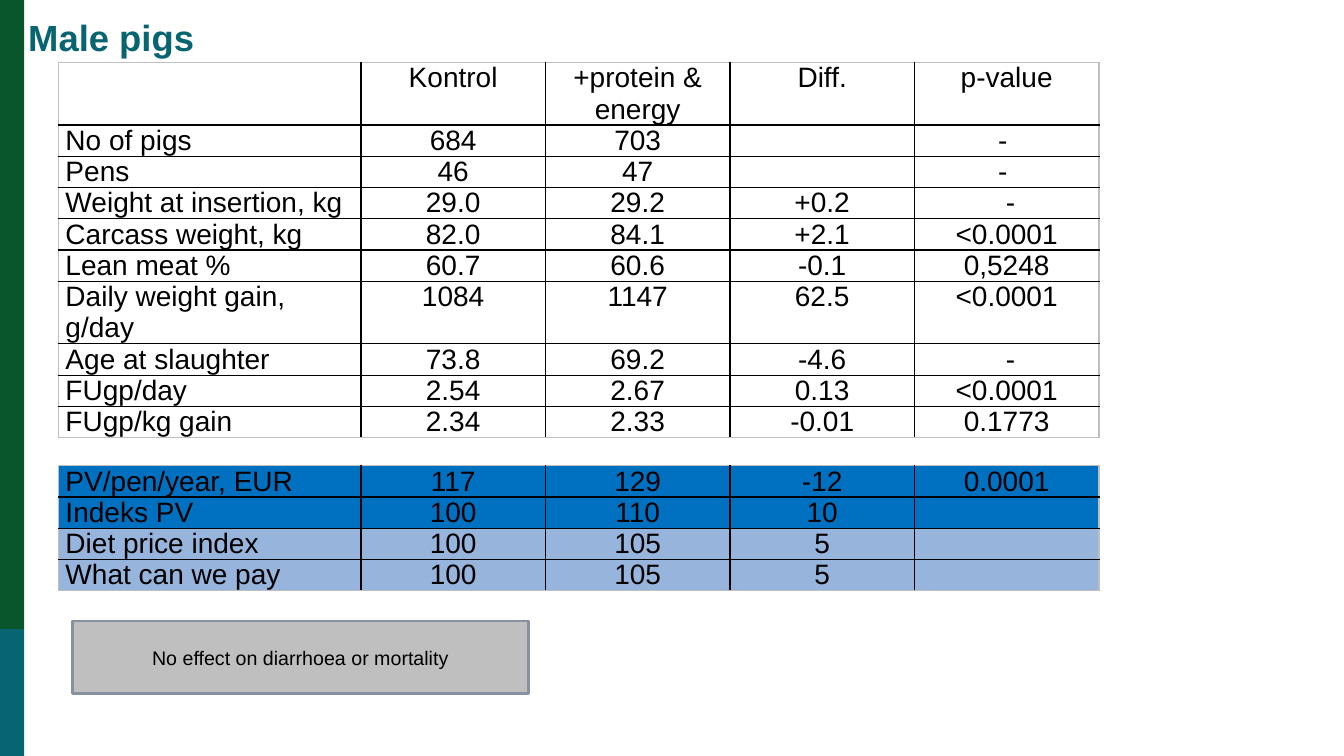
from lxml import etree
from pptx import Presentation
from pptx import util as u
from pptx.dml.color import RGBColor
from pptx.enum import shapes, text
from pptx.oxml import ns

FONT = "Arial"
COLORS = {
    "teal": "076471", "green": "09562C", "black": "000000",
    "outer": "BFBFBF", "blue": "0070C0", "light_blue": "96B4DC",
    "note": "BFBFBF", "note_line": "88919F",
}
ROW_HEIGHT = 0.31
COLUMNS = [3, 1.83, 1.83, 1.83, 1.83]
RESULTS = [
    ["", "Kontrol", "+protein & energy", "Diff.", "p-value"],
    ["No of pigs", "684", "703", "", "- "],
    ["Pens", "46", "47", "", "- "],
    ["Weight at insertion, kg", "29.0", "29.2", "+0.2", " -"],
    ["Carcass weight, kg", "82.0", "84.1", "+2.1", "<0.0001"],
    ["Lean meat %", "60.7", "60.6", "-0.1", "0,5248"],
    ["Daily weight gain, g/day", "1084", "1147", "62.5", "<0.0001"],
    ["Age at slaughter", "73.8", "69.2", "-4.6", " -"],
    ["FUgp/day", "2.54", "2.67", "0.13", "<0.0001"],
    ["FUgp/kg gain", "2.34", "2.33", "-0.01", "0.1773"],
]
ECONOMY = [
    ["PV/pen/year, EUR", "117", "129", "-12", "0.0001"],
    ["Indeks PV", "100", "110", "10", ""],
    ["Diet price index", "100", "105", "5", ""],
    ["What can we pay", "100", "105", "5", ""],
]


def rgb(name):
    return RGBColor.from_string(COLORS[name])


def style_paragraph(p, size, color, align, bold=False):
    p.alignment = align
    p.font.name, p.font.size, p.font.bold = FONT, u.Pt(size), bold
    p.font.color.rgb = rgb(color)


def add_box(s, left, top, width, height, fill, line=None):
    sp = s.shapes.add_shape(shapes.MSO_SHAPE.RECTANGLE, u.Inches(left), u.Inches(top),
                            u.Inches(width), u.Inches(height))
    sp.shadow.inherit = False
    sp.fill.solid()
    sp.fill.fore_color.rgb = rgb(fill)
    if line:
        sp.line.color.rgb = rgb(line)
        sp.line.width = u.Pt(2)
    else:
        sp.line.fill.background()
    return sp


def add_title(s, title):
    sp = s.shapes.title
    sp.left, sp.top = u.Inches(0.28), u.Inches(0)
    sp.width, sp.height = u.Inches(10.26), u.Inches(0.78)
    tf = sp.text_frame
    tf.margin_left = tf.margin_right = tf.margin_top = tf.margin_bottom = 0
    tf.vertical_anchor = text.MSO_ANCHOR.MIDDLE
    tf.text = title
    p = tf.paragraphs[0]
    p.line_spacing = 0.9
    style_paragraph(p, 26, "teal", text.PP_ALIGN.LEFT, bold=True)


def set_borders(cell, outer_sides):
    tcPr = cell._tc.get_or_add_tcPr()
    for i, side in enumerate(("lnL", "lnR", "lnT", "lnB")):
        ln = etree.Element(ns.qn(f"a:{side}"), w=str(u.Pt(1)))
        fill = etree.SubElement(ln, ns.qn("a:solidFill"))
        color = COLORS["outer" if side in outer_sides else "black"]
        etree.SubElement(fill, ns.qn("a:srgbClr"), val=color)
        tcPr.insert(i, ln)


def add_data_table(s, top, rows, fills, tall_rows=()):
    heights = [ROW_HEIGHT * (2 if i in tall_rows else 1) for i in range(len(rows))]
    frame = s.shapes.add_table(len(rows), len(COLUMNS), u.Inches(0.58), u.Inches(top),
                               u.Inches(sum(COLUMNS)), u.Inches(sum(heights)))
    table = frame.table
    table.first_row = table.horz_banding = False
    for column, width in zip(table.columns, COLUMNS):
        column.width = u.Inches(width)
    for i, (row, values) in enumerate(zip(table.rows, rows)):
        row.height = u.Inches(heights[i])
        for j, value in enumerate(values):
            cell = row.cells[j]
            cell.margin_left = cell.margin_right = u.Inches(0.07)
            cell.margin_top = cell.margin_bottom = 0
            cell.text = value
            align = text.PP_ALIGN.CENTER if j else text.PP_ALIGN.LEFT
            style_paragraph(cell.text_frame.paragraphs[0], 20, "black", align)
            if fills[i]:
                cell.fill.solid()
                cell.fill.fore_color.rgb = rgb(fills[i])
            else:
                cell.fill.background()
            edges = {"lnL": j == 0, "lnR": j == len(COLUMNS) - 1,
                     "lnT": i == 0, "lnB": i == len(rows) - 1}
            set_borders(cell, [side for side, is_outer in edges.items() if is_outer])


def add_note(s, note):
    sp = add_box(s, 0.72, 6.16, 4.52, 0.72, "note", "note_line")
    tf = sp.text_frame
    tf.word_wrap = True
    tf.vertical_anchor = text.MSO_ANCHOR.MIDDLE
    tf.text = note
    style_paragraph(tf.paragraphs[0], 14, "black", text.PP_ALIGN.CENTER)


def main():
    prs = Presentation()
    prs.slide_width, prs.slide_height = u.Inches(13.33), u.Inches(7.5)
    s = prs.slides.add_slide(prs.slide_layouts[5])

    # Side band and title
    add_box(s, 0, 6.24, 0.24, 1.26, "teal")
    add_box(s, 0, 0, 0.24, 6.24, "green")
    add_title(s, "Male pigs")

    # Production results and economy
    add_data_table(s, 0.62, RESULTS, [None] * len(RESULTS), tall_rows=(0, 6))
    add_data_table(s, 4.62, ECONOMY, ["blue"] * 2 + ["light_blue"] * 2)

    # Closing note
    add_note(s, "No effect on diarrhoea or mortality")
    prs.save("out.pptx")


if __name__ == "__main__":
    main()
